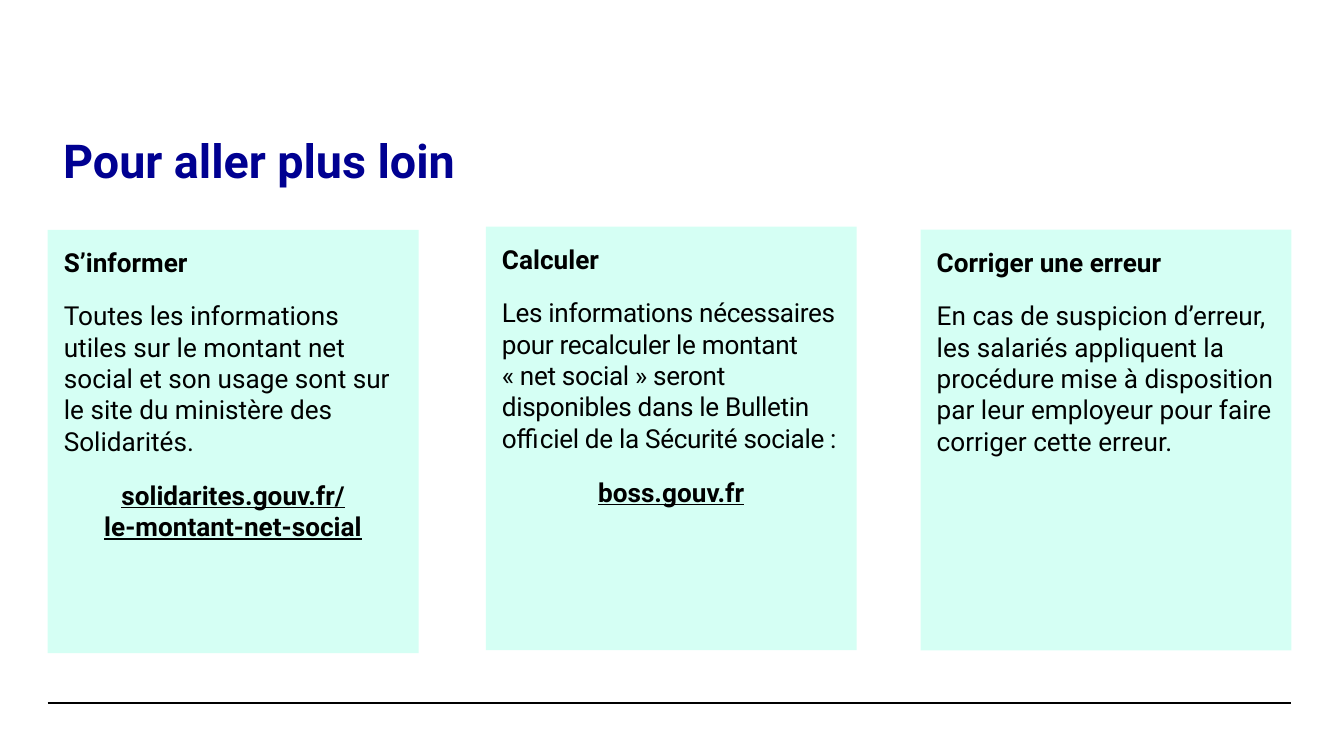
import dataclasses
import pptx
import pptx.util
import pptx.dml.color
import pptx.enum.shapes
import pptx.enum.text
import lxml.etree
from pptx.oxml.ns import qn

COLS, ROWS = 1000, 562.5
CELL = pptx.util.Inches(0.01)
HARD = chr(160)


@dataclasses.dataclass(frozen=True)
class Theme:
    font: str = "Roboto"
    ink: str = "000000"
    navy: str = "000091"
    mint: str = "D5FFF4"
    head: float = 25
    body: float = 14
    rule: float = 0.8
    pad: int = 12


THEME = Theme()
ALIGN = pptx.enum.text.PP_ALIGN


def color(code):
    return pptx.dml.color.RGBColor.from_string(code)


def grid(*cells):
    return [int(cell * CELL) for cell in cells]


def add_run(para, text, size, tint, bold=False, under=False, track=0):
    run = para.add_run()
    run.text = text
    font = run.font
    font.name = THEME.font
    font.size = pptx.util.Pt(size)
    font.color.rgb = color(tint)
    font.bold = bold
    if under:
        font.underline = True
    if track:
        run._r.get_or_add_rPr().set("spc", str(track))


def add_para(frame, first=False, align=ALIGN.LEFT):
    para = frame.paragraphs[0] if first else frame.add_paragraph()
    para.alignment = align
    para.space_before = pptx.util.Pt(0 if first else 4)
    para.space_after = pptx.util.Pt(8)
    return para


def add_title(slide, box, text):
    frame = slide.shapes.add_textbox(*grid(*box)).text_frame
    frame.word_wrap = True
    frame.vertical_anchor = pptx.enum.text.MSO_ANCHOR.MIDDLE
    frame.margin_left = THEME.pad * CELL
    para = frame.paragraphs[0]
    para.line_spacing = 0.9
    add_run(para, text, THEME.head, THEME.navy, bold=True)


def add_card(slide, box, head, body, link=(), track=0):
    card = slide.shapes.add_shape(
        pptx.enum.shapes.MSO_SHAPE.RECTANGLE, *grid(*box))
    card.shadow.inherit = False
    card.fill.solid()
    card.fill.fore_color.rgb = color(THEME.mint)
    card.line.fill.background()
    frame = card.text_frame
    frame.word_wrap = True
    frame.vertical_anchor = pptx.enum.text.MSO_ANCHOR.TOP
    frame.margin_left = frame.margin_right = frame.margin_top = THEME.pad * CELL
    frame.margin_bottom = 0
    size, ink = THEME.body, THEME.ink
    add_run(add_para(frame, first=True), head, size, ink, bold=True)
    add_run(add_para(frame), body, size, ink, track=track)
    if link:
        para = add_para(frame, align=ALIGN.CENTER)
        for row, text in enumerate(link):
            if row:
                para.add_line_break()
            add_run(para, text, size, ink, bold=True, under=True)


def add_rule(slide, box):
    left, top, width, high = box
    line = slide.shapes.add_connector(
        pptx.enum.shapes.MSO_CONNECTOR.STRAIGHT,
        *grid(left, top, left + width, top + high))
    line.line.color.rgb = color(THEME.ink)
    line.line.width = pptx.util.Pt(THEME.rule)
    lxml.etree.SubElement(line._element.spPr, qn("a:effectLst"))


CARDS = [
    ((35.5, 171, 276, 315), "S’informer",
     f"Toutes les informations utiles sur le montant net social{HARD}et son "
     "usage sont sur le site du ministère des Solidarités.",
     ("solidarites.gouv.fr/", "le-montant-net-social"), 0),
    ((361.5, 168.7, 276, 315), "Calculer",
     "Les informations nécessaires pour recalculer le montant "
     f"«{HARD}net social{HARD}» seront disponibles dans le Bulletin officiel "
     "de la Sécurité sociale :",
     ("boss.gouv.fr",), -20),
    ((685, 171, 276, 313), "Corriger une erreur",
     "En cas de suspicion d’erreur, les salariés appliquent la procédure mise "
     "à disposition par leur employeur pour faire corriger cette erreur.",
     (), 0),
]


def main():
    deck = pptx.Presentation()
    deck.slide_width, deck.slide_height = grid(COLS, ROWS)
    slide = deck.slides.add_slide(deck.slide_layouts[6])
    for left in (35.4, 38.6):
        add_rule(slide, (left, 523, 922, 0))
    add_title(slide, (35, 92, 921, 59), "Pour aller plus loin")
    for card in CARDS:
        add_card(slide, *card)
    deck.save("out.pptx")


if __name__ == "__main__":
    main()
